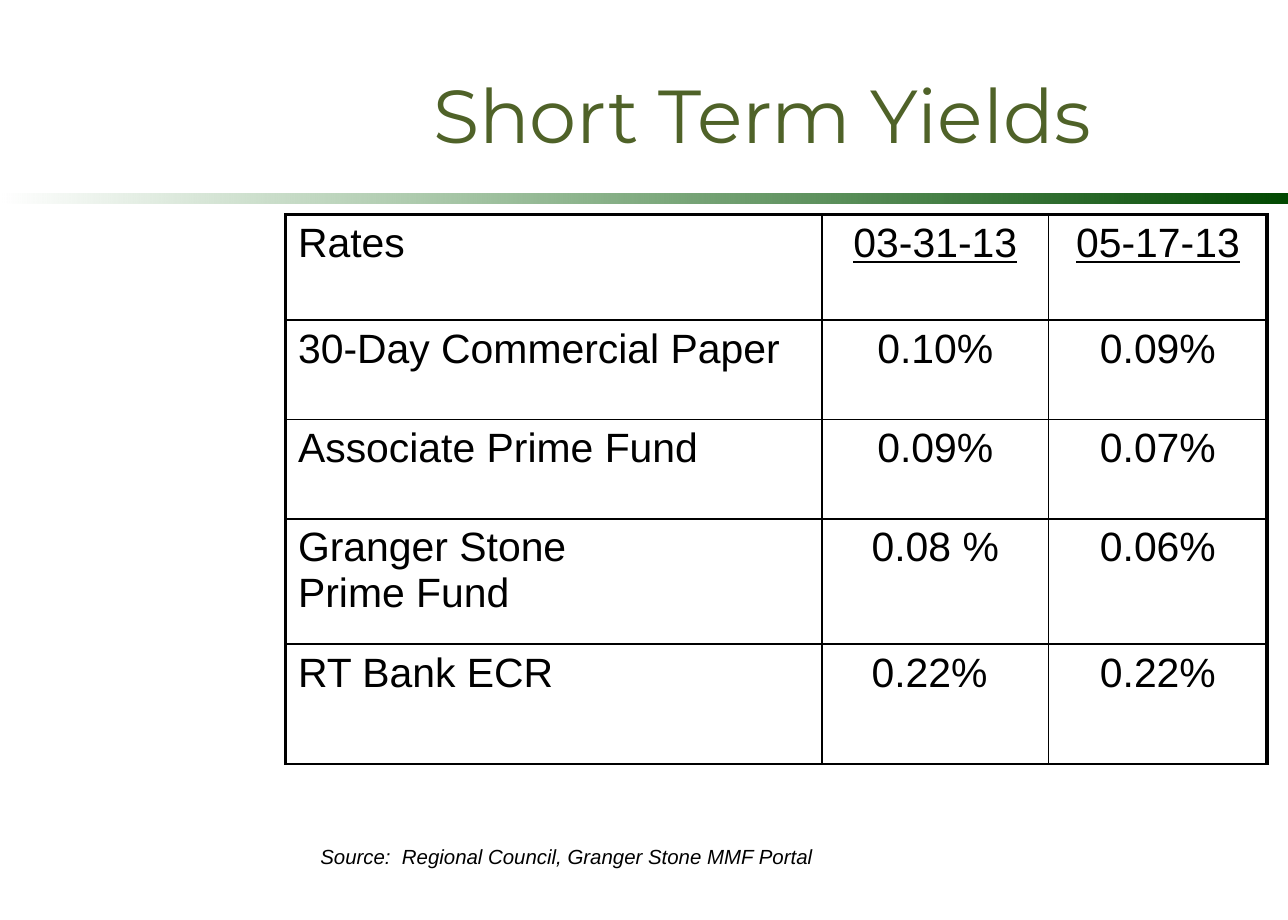
from lxml.etree import SubElement
from pptx import Presentation
from pptx.dml.color import RGBColor
from pptx.enum.shapes import MSO_SHAPE
from pptx.enum.text import MSO_ANCHOR, PP_ALIGN
from pptx.oxml.ns import qn
from pptx.util import Pt

PX = 9144
BLACK = RGBColor(0x00, 0x00, 0x00)
OLIVE = RGBColor(0x4F, 0x62, 0x28)
GREEN = RGBColor(0x00, 0x66, 0x00)
DARK = RGBColor(0x00, 0x49, 0x00)
THIN, THICK = 1, 2.25

COLS = (437, 185, 178)
ROWS = (86, 81, 81, 102, 98)
RATES = (
    ("Rates", "03-31-13", "05-17-13"),
    ("30-Day Commercial Paper", "0.10%", "0.09%"),
    ("Associate Prime Fund", "0.09%", "0.07%"),
    ("Granger Stone\vPrime Fund", "0.08 %", "0.06%"),
    ("RT Bank ECR", "0.22% ", "0.22%"),
)


def scale(*sizes):
    """Turn px lengths into EMU."""
    return [size * PX for size in sizes]


def write(frame, text, size=24, color=BLACK, font="Arial",
          align=PP_ALIGN.CENTER, **style):
    """Put one formatted paragraph into a text frame."""
    frame.word_wrap = True
    para = frame.paragraphs[0]
    para.text = text
    para.alignment = align
    for run in para.runs:
        run.font.size = Pt(size)
        run.font.name = font
        run.font.color.rgb = color
        for key, value in style.items():
            setattr(run.font, key, value)


def label(slide, box, text, **style):
    """Add a text box centred in height."""
    frame = slide.shapes.add_textbox(*scale(*box)).text_frame
    frame.vertical_anchor = MSO_ANCHOR.MIDDLE
    write(frame, text, **style)


def band(slide, box):
    """Draw the bar that fades in from the left."""
    bar = slide.shapes.add_shape(MSO_SHAPE.RECTANGLE, *scale(*box))
    bar.shadow.inherit = False
    bar.line.fill.background()
    bar.fill.gradient()
    bar.fill.gradient_angle = 0
    for stop, color in zip(bar.fill.gradient_stops, (GREEN, DARK)):
        stop.color.rgb = color
    first = bar.element.xpath(".//a:gs/a:srgbClr")[0]
    SubElement(first, qn("a:alpha"), val="0")


def border(cell, **widths):
    """Set the cell's border widths in points by side."""
    props = cell._tc.get_or_add_tcPr()
    for side, width in widths.items():
        line = SubElement(props, qn(f"a:ln{side}"), w=str(Pt(width)))
        fill = SubElement(line, qn("a:solidFill"))
        SubElement(fill, qn("a:srgbClr"), val=str(BLACK))


def grid(slide, box):
    """Add the table of rates."""
    table = slide.shapes.add_table(len(ROWS), len(COLS), *scale(*box)).table
    table.first_row = table.horz_banding = False
    for col, width in zip(table.columns, scale(*COLS)):
        col.width = width
    for row, height in zip(table.rows, scale(*ROWS)):
        row.height = height
    last = len(COLS) - 1
    for r, texts in enumerate(RATES):
        for c, text in enumerate(texts):
            cell = table.cell(r, c)
            border(cell,
                   L=THIN if c else THICK,
                   R=THICK if c == last else THIN,
                   T=THIN if r else THICK,
                   B=THIN)
            cell.fill.background()
            write(cell.text_frame, text,
                  align=PP_ALIGN.CENTER if c else PP_ALIGN.LEFT,
                  underline=r == 0 and c > 0)


def main():
    """Build and save the slide."""
    deck = Presentation()
    deck.slide_width, deck.slide_height = scale(1050, 750)
    slide = deck.slides.add_slide(deck.slide_layouts[6])
    band(slide, (0, 158, 1050, 8))
    label(slide, (245, 30, 753, 125), "Short Term Yields",
          size=44, color=OLIVE, font="Montserrat")
    grid(slide, (233, 175, sum(COLS), sum(ROWS)))
    label(slide, (208, 683, 508, 30),
          "Source:  Regional Council, Granger Stone MMF Portal",
          size=12, italic=True)
    deck.save("out.pptx")


if __name__ == "__main__":
    main()
